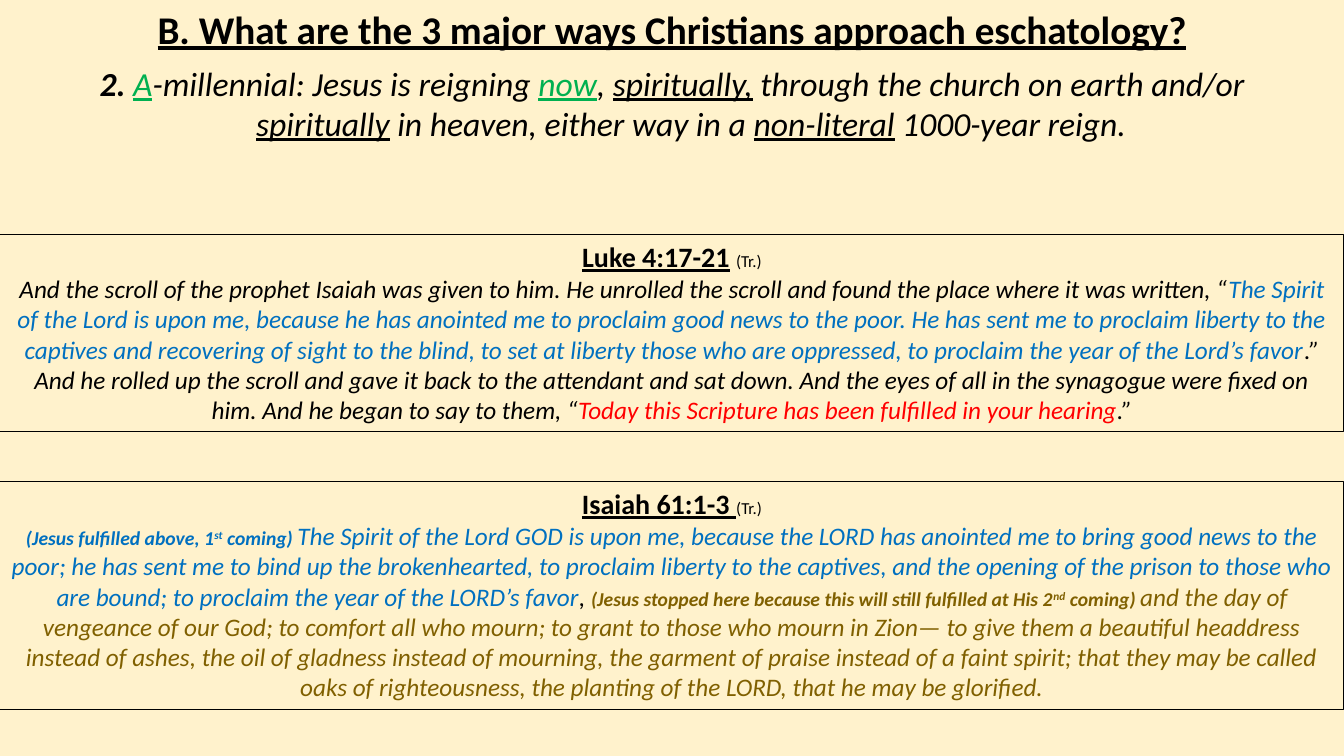
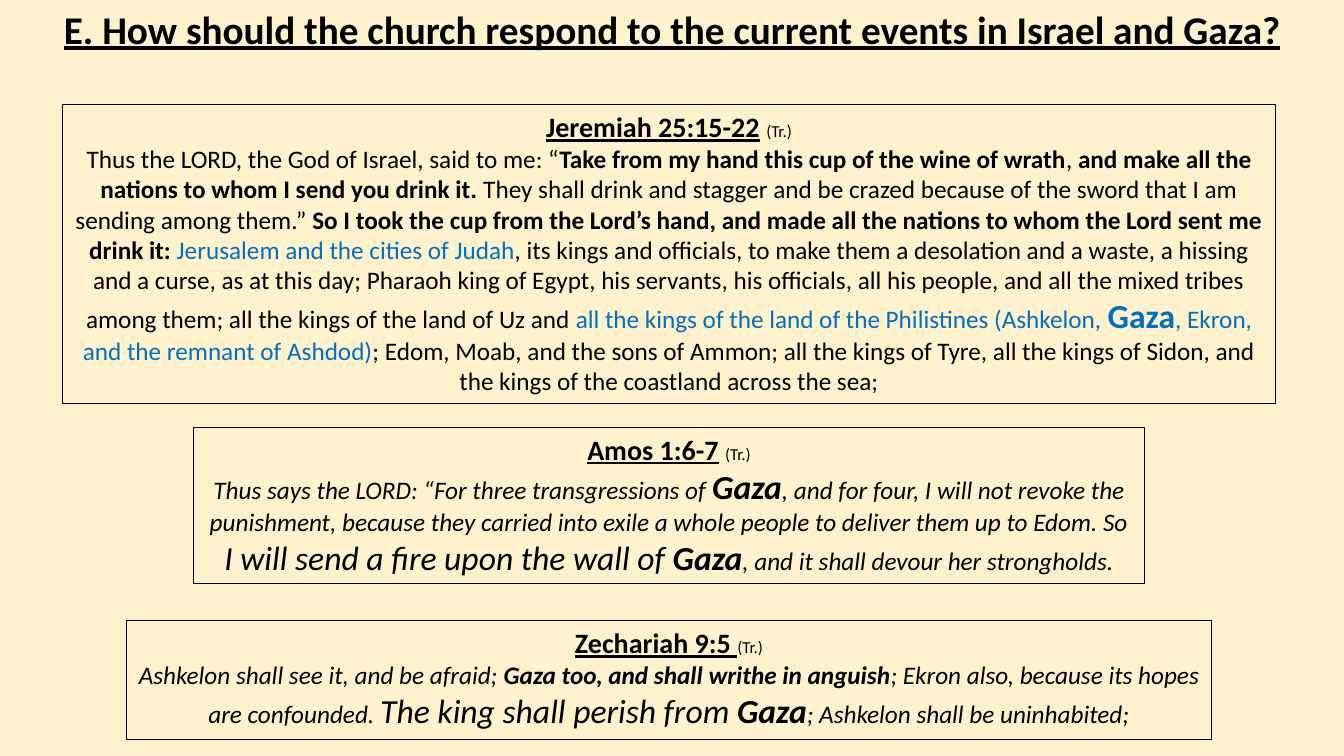
"""Builds two slides of scripture passages about eschatology."""
import pptx
import pptx.dml.color
import pptx.enum.shapes
import pptx.enum.text
import pptx.util
from lxml import etree

WIDTH, HEIGHT = 13.33, 7.5
COL, ROW = WIDTH / 100, HEIGHT / 100
FONT = "Calibri"
CREAM, BLACK, BLUE = "FFF2CC", "000000", "0070C0"
GREEN, RED, OLIVE = "00B050", "FF0000", "806000"
TITLE_ROWS = 7.6

TITLE = dict(size=28, bold=True, underline=True)
POINT = dict(size=24, italic=True)
REFERENCE = dict(size=20, bold=True, underline=True)
GAP = dict(REFERENCE, underline=False)
VERSION = dict(size=12)
PLAIN = dict(size=18)
VERSE = dict(PLAIN, italic=True)
NOTE = dict(size=14, bold=True, italic=True)

BOLD = dict(bold=True)
LARGE = dict(size=24)
KEY = dict(size=24, bold=True)
UNDER = dict(underline=True)
IN_BLUE = dict(color=BLUE)
GREEN_UNDER = dict(color=GREEN, underline=True)
BLUE_NOTE = dict(NOTE, color=BLUE)
OLIVE_NOTE = dict(NOTE, color=OLIVE)


def rgb(value):
    """Return the colour of a hex string."""
    return pptx.dml.color.RGBColor.from_string(value)


def cols(n):
    """Return the width of n columns."""
    return pptx.util.Inches(n * COL)


def rows(n):
    """Return the height of n rows."""
    return pptx.util.Inches(n * ROW)


def add_run(p, text, style):
    """Add a run formatted by a dict of values."""
    r = p.add_run()
    r.text = text
    values = dict(name=FONT, bold=False, italic=False, underline=False)
    values.update(style)
    r.font.color.rgb = rgb(values.pop("color", BLACK))
    values["size"] = pptx.util.Pt(values["size"])
    baseline = values.pop("baseline", None)
    for key, value in values.items():
        setattr(r.font, key, value)
    if baseline:
        r._r.get_or_add_rPr().set("baseline", str(baseline * 1000))


def write(tf, paragraphs):
    """Fill a text frame with centred paragraphs of (text, style) runs."""
    settings = dict(word_wrap=True,
                    auto_size=pptx.enum.text.MSO_AUTO_SIZE.SHAPE_TO_FIT_TEXT,
                    vertical_anchor=pptx.enum.text.MSO_ANCHOR.TOP)
    for key, value in settings.items():
        setattr(tf, key, value)
    for i, runs in enumerate(paragraphs):
        p = tf.add_paragraph() if i else tf.paragraphs[0]
        p.alignment = pptx.enum.text.PP_ALIGN.CENTER
        p.space_before = pptx.util.Pt(0)
        for text, style in runs:
            add_run(p, text, style)


def styled(base, runs):
    """Lay each run's own style over a base style."""
    return [(text, {**base, **style}) for text, style in runs]


def place(sp, left, top, width, height):
    """Set a shape's position and size in columns and rows."""
    sp.left, sp.top = cols(left), rows(top)
    sp.width, sp.height = cols(width), rows(height)


def add_slide(prs, layout, title):
    """Add a slide with the shared title style."""
    s = prs.slides.add_slide(prs.slide_layouts[layout])
    place(s.shapes.title, 0, 0, 100, TITLE_ROWS)
    write(s.shapes.title.text_frame, [[(title, TITLE)]])
    return s


def add_point(s, lines, indent):
    """Fill the body with unbulleted lines, those after the first indented."""
    sp = s.placeholders[1]
    place(sp, 0, TITLE_ROWS, 100, 12.13)
    write(sp.text_frame, [styled(POINT, line) for line in lines])
    for i, p in enumerate(sp.text_frame.paragraphs):
        pPr = p._p.get_or_add_pPr()
        pPr.set("marL", str(pptx.util.Inches(indent if i else 0)))
        pPr.set("indent", "0")
        etree.SubElement(pPr, pptx.oxml.ns.qn("a:buNone"))


def add_passage(s, reference, base, runs, top, width, height,
                centre=50, gap=GAP):
    """Add an outlined box with a reference line and a passage."""
    sp = s.shapes.add_shape(pptx.enum.shapes.MSO_SHAPE.RECTANGLE, 0, 0, 0, 0)
    place(sp, centre - width / 2, top, width, height)
    sp.shadow.inherit = False
    sp.fill.background()
    sp.line.color.rgb = rgb(BLACK)
    sp.line.width = pptx.util.Pt(0.75)
    heading = [(reference, REFERENCE), (" ", gap), ("(Tr.)", VERSION)]
    write(sp.text_frame, [heading, styled(base, runs)])


def add_approach_slide(prs):
    """Add the slide on the a-millennial approach."""
    s = add_slide(prs, 1, "B. What are the 3 major ways Christians approach eschatology?")
    add_point(s, [
        [("2. ", BOLD), ("A", GREEN_UNDER),
         ("-millennial: Jesus is reigning ", {}), ("now", GREEN_UNDER),
         (", ", {}), ("spiritually,", UNDER),
         (" through the church on earth and/or", {})],
        [("spiritually", UNDER), (" in heaven, either way in a ", {}),
         ("non-literal", UNDER), (" 1000-year reign.", {})],
    ], indent=0.38)
    add_passage(s, "Luke 4:17-21", VERSE, [
        ("And the scroll of the prophet Isaiah was given to him. He unrolled "
         "the scroll and found the place where it was written, “", {}),
        ("The Spirit of the Lord is upon me, because he has anointed me to "
         "proclaim good news to the poor. He has sent me to proclaim liberty "
         "to the captives and recovering of sight to the blind, to set at "
         "liberty those who are oppressed, to proclaim the year of the "
         "Lord’s favor", IN_BLUE),
        (".” And he rolled up the scroll and gave it back to the attendant "
         "and sat down. And the eyes of all in the synagogue were fixed on "
         "him. And he began to say to them, “", {}),
        ("Today this Scripture has been fulfilled in your hearing",
         dict(color=RED)),
        (".”", {}),
    ], top=31.07, width=100, height=26)
    add_passage(s, "Isaiah 61:1-3", VERSE, [
        ("(Jesus fulfilled above, 1", BLUE_NOTE),
        ("st", dict(BLUE_NOTE, baseline=30)), (" coming) ", BLUE_NOTE),
        ("The Spirit of the Lord GOD is upon me, because the LORD has "
         "anointed me to bring good news to the poor; he has sent me to bind "
         "up the brokenhearted, to proclaim liberty to the captives, and the "
         "opening of the prison to those who are bound; to proclaim the year "
         "of the LORD’s favor", IN_BLUE),
        (", ", {}),
        ("(Jesus stopped here because this will still fulfilled at His 2",
         OLIVE_NOTE),
        ("nd", dict(OLIVE_NOTE, baseline=30)), (" coming) ", OLIVE_NOTE),
        ("and the day of vengeance of our God; to comfort all who mourn; to "
         "grant to those who mourn in Zion— to give them a beautiful "
         "headdress instead of ashes, the oil of gladness instead of "
         "mourning, the garment of praise instead of a faint spirit; that "
         "they may be called oaks of righteousness, the planting of the "
         "LORD, that he may be glorified.", dict(color=OLIVE)),
    ], top=63.73, width=100, height=30.13, gap=REFERENCE)


def add_response_slide(prs):
    """Add the slide on the church's response."""
    s = add_slide(prs, 5, "E. How should the church respond to the current "
                          "events in Israel and Gaza?")
    centre = 49.78
    add_passage(s, "Jeremiah 25:15-22", PLAIN, [
        ("Thus the LORD, the God of Israel, said to me: “", {}),
        ("Take from my hand this cup of the wine of wrath", BOLD),
        (", ", {}),
        ("and make all the nations to whom I send you drink it. ", BOLD),
        ("They shall drink and stagger and be crazed because of the sword "
         "that I am sending among them.” ", {}),
        ("So I took the cup from the Lord’s hand, and made all the nations "
         "to whom the Lord sent me drink it: ", BOLD),
        ("Jerusalem and the cities of Judah", IN_BLUE),
        (", its kings and officials, to make them a desolation and a waste, "
         "a hissing and a curse, as at this day; Pharaoh king of Egypt, his "
         "servants, his officials, all his people, and all the mixed tribes "
         "among them; all the kings of the land of Uz and ", {}),
        ("all the kings of the land of the Philistines (Ashkelon, ", IN_BLUE),
        ("Gaza", dict(KEY, color=BLUE)),
        (", Ekron, and the remnant of Ashdod)", IN_BLUE),
        ("; Edom, Moab, and the sons of Ammon; all the kings of Tyre, all "
         "the kings of Sidon, and the kings of the coastland across the "
         "sea;", {}),
    ], top=13.87, width=90.32, height=39.47, centre=centre)
    add_passage(s, "Amos 1:6-7", VERSE, [
        ("Thus says the LORD: “For three transgressions of ", {}),
        ("Gaza", KEY),
        (", and for four, I will not revoke the punishment, because they "
         "carried into exile a whole people to deliver them up to Edom. "
         "So ", {}),
        ("I will send a fire upon the wall of ", LARGE),
        ("Gaza", KEY),
        (", and it shall devour her strongholds.", {}),
    ], top=56.53, width=70.74, height=20.67, centre=centre)
    add_passage(s, "Zechariah 9:5", VERSE, [
        ("Ashkelon shall see it, and be afraid; ", {}),
        ("Gaza too, and shall writhe in anguish", BOLD),
        ("; Ekron also, because its hopes are confounded. ", {}),
        ("The king shall perish from ", LARGE),
        ("Gaza", KEY),
        ("; Ashkelon shall be uninhabited;", {}),
    ], top=82.13, width=80.72, height=15.73, centre=centre, gap=REFERENCE)


def main():
    """Build and save the presentation."""
    prs = pptx.Presentation()
    prs.slide_width, prs.slide_height = cols(100), rows(100)
    fill = prs.slide_master.background.fill
    fill.solid()
    fill.fore_color.rgb = rgb(CREAM)
    add_approach_slide(prs)
    add_response_slide(prs)
    prs.save("out.pptx")


if __name__ == "__main__":
    main()
